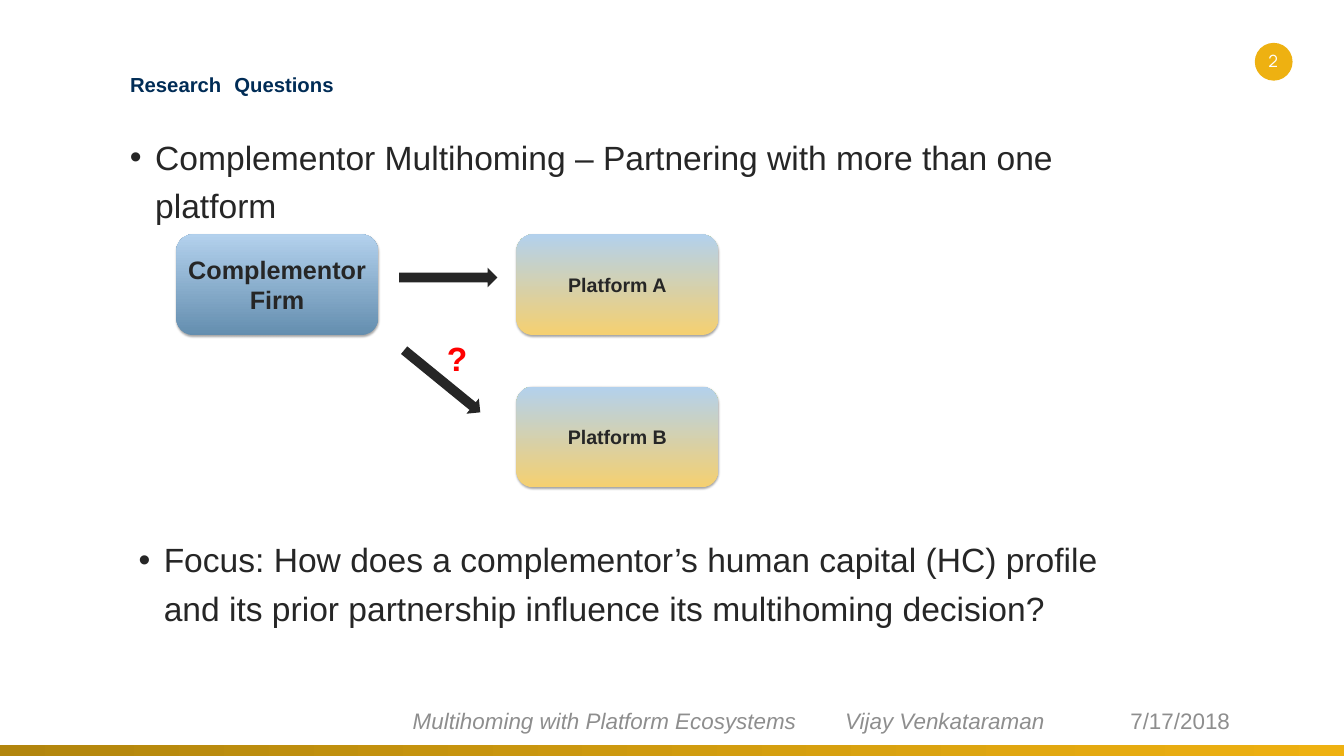
from lxml.etree import SubElement
from pptx import Presentation
from pptx.dml.color import RGBColor
from pptx.enum.shapes import MSO_SHAPE
from pptx.enum.text import MSO_ANCHOR, PP_ALIGN
from pptx.oxml.ns import qn
from pptx.util import Emu, Pt

EMU_PER_PX = 9144
WIDTH, HEIGHT = 2667, 1500
SMALL_INSETS = (10, 5, 10, 5)
WIDE_INSETS = (27, 13, 27, 13)
BOX_WIDTH, BOX_HEIGHT = 400, 200
PLATFORM_LEFT, FIRST_ROW, ROW_STEP = 1025, 465, 302
COLORS = {
    "gold": "EEB111",
    "dark_gold": "B2850D",
    "pale_gold": "F5D070",
    "navy": "002C56",
    "steel": "648EAF",
    "sky": "B3D1ED",
    "ink": "262626",
    "gray": "8E8E8E",
    "red": "FF0000",
    "white": "FFFFFF",
    "black": "000000",
}


def px(length):
    return Emu(length * EMU_PER_PX)


def rgb(name):
    return RGBColor.from_string(COLORS[name])


def write_text(shape, runs, size=48, color="ink", font="Arial", bold=False,
               italic=False, align=PP_ALIGN.LEFT, anchor=MSO_ANCHOR.TOP,
               insets=SMALL_INSETS, line_spacing=None, bullet=False, tab=None):
    frame = shape.text_frame
    frame.word_wrap = True
    frame.vertical_anchor = anchor
    (frame.margin_left, frame.margin_top,
     frame.margin_right, frame.margin_bottom) = map(px, insets)
    paragraph = frame.paragraphs[0]
    properties = paragraph._p.get_or_add_pPr()
    if bullet:
        properties.set("marL", str(px(50)))
        properties.set("indent", str(px(-50)))
        SubElement(properties, qn("a:buFont"), typeface="Arial")
        SubElement(properties, qn("a:buChar"), char="•")
    if tab:
        tabs = SubElement(properties, qn("a:tabLst"))
        SubElement(tabs, qn("a:tab"), pos=str(px(tab)), algn="l")
    paragraph.alignment = align
    if line_spacing:
        paragraph.line_spacing = line_spacing
    if isinstance(runs, str):
        runs = [(runs, size)]
    for text, run_size in runs:
        run = paragraph.add_run()
        run.text = text
        run.font.size = Pt(run_size)
        run.font.name = font
        run.font.bold = bold
        run.font.italic = italic
        run.font.color.rgb = rgb(color)


def add_text(slide, bounds, runs, **text_format):
    write_text(slide.shapes.add_textbox(*map(px, bounds)), runs, **text_format)


def add_shape(slide, kind, bounds, fill, angle=0):
    shape = slide.shapes.add_shape(kind, *map(px, bounds))
    shape.shadow.inherit = False
    shape.line.fill.background()
    if isinstance(fill, str):
        shape.fill.solid()
        shape.fill.fore_color.rgb = rgb(fill)
    else:
        shape.fill.gradient()
        shape.fill.gradient_angle = angle
        for stop, color in zip(shape.fill.gradient_stops, fill):
            stop.color.rgb = rgb(color)
    return shape


def add_drop_shadow(shape):
    effects = shape._element.spPr.find(qn("a:effectLst"))
    shadow = SubElement(effects, qn("a:outerShdw"), blurRad=str(Pt(3.1)),
                        dist=str(Pt(1.8)), dir="5400000", rotWithShape="0")
    color = SubElement(shadow, qn("a:srgbClr"), val=COLORS["black"])
    SubElement(color, qn("a:alpha"), val="35000")


def add_company(slide, left, top, name, bottom_color, size):
    box = add_shape(slide, MSO_SHAPE.ROUNDED_RECTANGLE,
                    (left, top, BOX_WIDTH, BOX_HEIGHT),
                    (bottom_color, "sky"), angle=90)
    add_drop_shadow(box)
    write_text(box, name, size=size, bold=True, align=PP_ALIGN.CENTER,
               anchor=MSO_ANCHOR.MIDDLE)


def add_arrow(slide, left, top, rotation=0):
    arrow = add_shape(slide, MSO_SHAPE.RIGHT_ARROW, (left, top, 195, 39), "ink")
    arrow.rotation = rotation


def add_bullet(slide, left, top, text):
    add_text(slide, (left, top, 2077, 221), text, insets=WIDE_INSETS,
             line_spacing=1.2, bullet=True)


def add_frame(slide):
    add_shape(slide, MSO_SHAPE.OVAL, (2490, 85, 75, 75), "gold")
    add_shape(slide, MSO_SHAPE.RECTANGLE, (0, 1479, WIDTH, HEIGHT - 1479),
              ("dark_gold", "gold"))
    add_text(slide, (2468, 95, 117, 80), "2", size=24, font="Manrope",
             color="white", align=PP_ALIGN.CENTER)
    add_text(slide, (734, 1386, 1427, 88),
             "Multihoming with Platform Ecosystems\tVijay Venkataraman",
             size=32, color="gray", italic=True, anchor=MSO_ANCHOR.MIDDLE,
             insets=(85, 13, 27, 13), tab=858)
    add_text(slide, (2216, 1390, 318, 80), "7/17/2018", size=32, color="gray",
             anchor=MSO_ANCHOR.MIDDLE, insets=WIDE_INSETS)


def add_diagram(slide):
    add_company(slide, 350, FIRST_ROW, "Complementor Firm", "steel", 36)
    for row, name in enumerate(("Platform A", "Platform B")):
        add_company(slide, PLATFORM_LEFT, FIRST_ROW + row * ROW_STEP, name,
                    "pale_gold", 28)
    add_arrow(slide, 792, 531)
    add_arrow(slide, 780, 737, rotation=39.2)
    add_text(slide, (877, 665, 88, 92), "?", color="red", bold=True)


def main():
    presentation = Presentation()
    presentation.slide_width = px(WIDTH)
    presentation.slide_height = px(HEIGHT)
    slide = presentation.slides.add_slide(presentation.slide_layouts[6])
    add_frame(slide)
    add_text(slide, (231, 57, 2125, 160),
             [("Research", 29), (" ", 66), ("Questions", 29)],
             color="navy", bold=True, insets=WIDE_INSETS, line_spacing=1.2)
    add_bullet(slide, 231, 242,
               "Complementor Multihoming – Partnering with more than one platform")
    add_diagram(slide)
    add_bullet(slide, 248, 1041,
               "Focus: How does a complementor’s human capital (HC) profile "
               "and its prior partnership influence its multihoming decision?")
    presentation.save("out.pptx")


if __name__ == "__main__":
    main()
